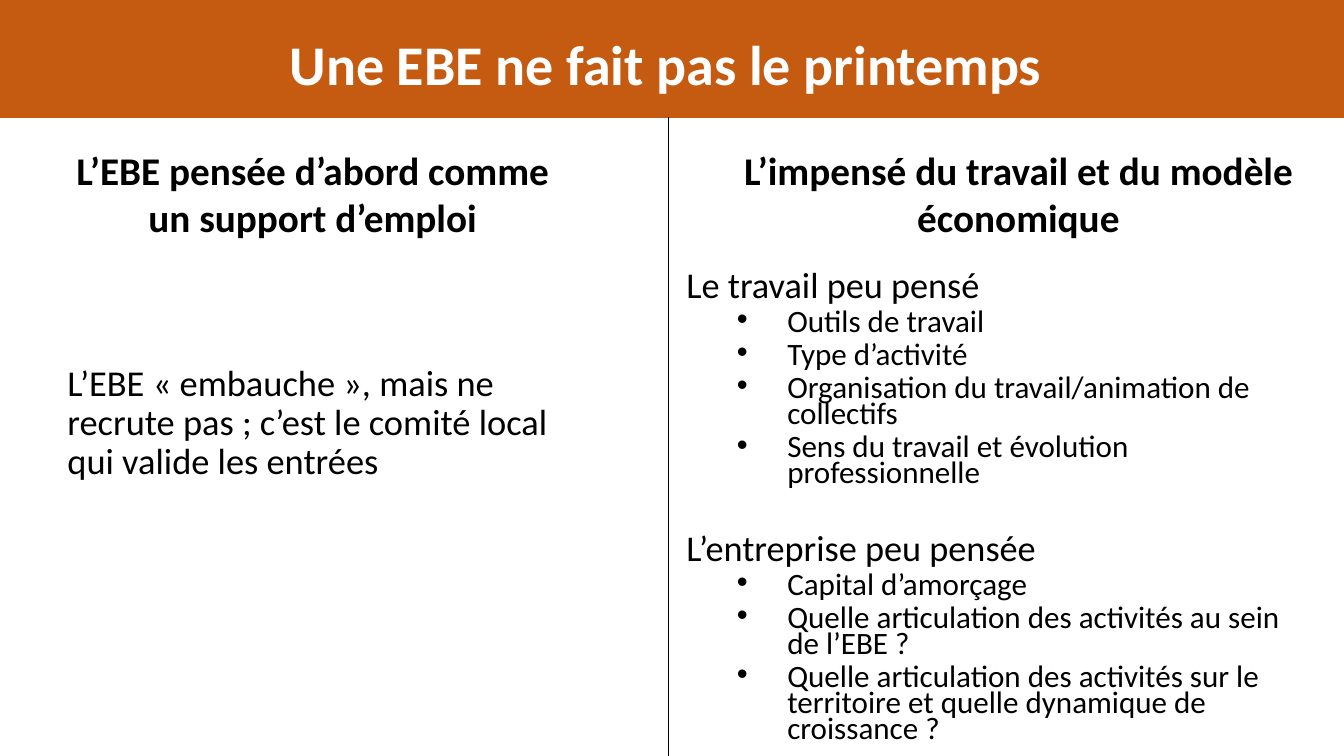
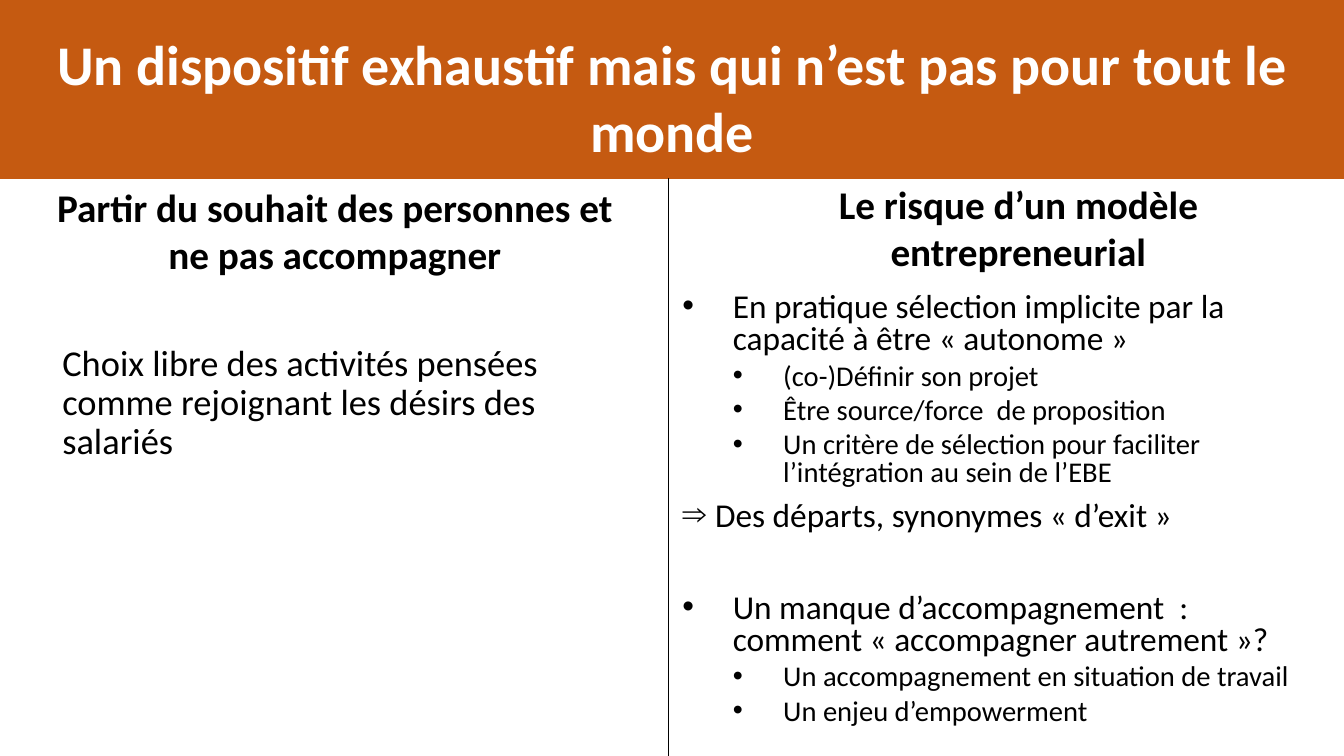
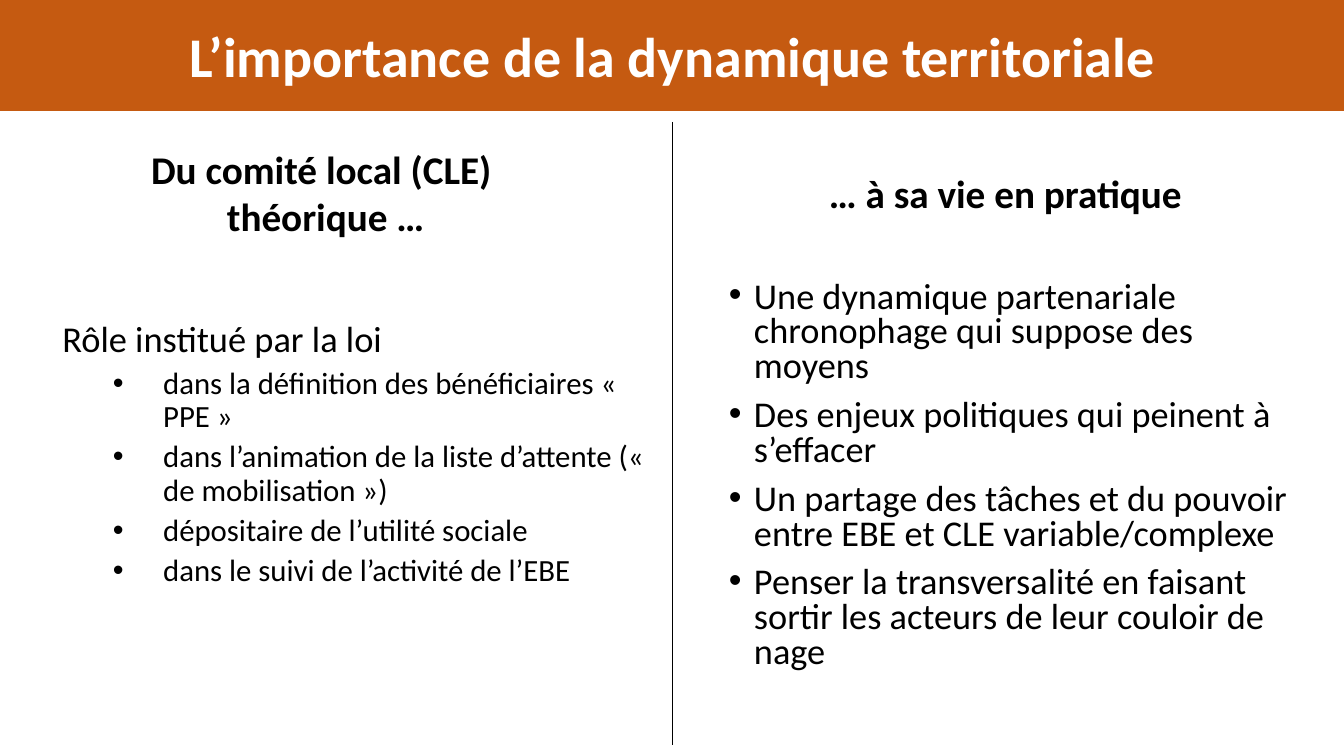
from dataclasses import dataclass

from lxml import etree
from pptx import Presentation
from pptx import util as u
from pptx.dml.color import RGBColor
from pptx.enum import shapes, text
from pptx.oxml.ns import qn


@dataclass(frozen=True)
class Theme:
    font: str = "Calibri"
    band: RGBColor = RGBColor(0xC5, 0x5A, 0x11)
    ink: RGBColor = RGBColor(0, 0, 0)
    paper: RGBColor = RGBColor(255, 255, 255)
    title_size: float = 40
    heading_size: float = 28
    band_line: float = 1
    divider_line: float = 0.5


THEME = Theme()
WIDTH, HEIGHT = 13.33, 7.5

# Paragraph kinds: list level, left margin and hanging indent in inches, space before in points
KINDS = {
    "plain": {"level": 0, "margin": 0, "hang": 0, "bullet": None, "before": 10},
    "item": {"level": 0, "margin": 0.25, "hang": 0.25, "bullet": "•", "before": 10},
    "point": {"level": 0, "margin": 0.5, "hang": 0.5, "bullet": "•", "before": 10},
    "sub": {"level": 1, "margin": 1, "hang": 0.5, "bullet": "•", "before": 5},
    "arrow": {"level": 0, "margin": 0.25, "hang": 0.25, "bullet": "⇒", "before": 10},
}

# Boxes are (left, top, width, height); "sizes" are the type sizes of levels 0 and 1;
# "group_gap" is the space before the paragraph at index "group_start"
SLIDES = [
    {
        "title": "Une EBE ne fait pas le printemps",
        "band_height": 1.16, "title_top": 0.29, "title_right": 0.13,
        "divider": (6.63, 1.16, HEIGHT),
        "headings": [
            ("L’EBE pensée d’abord comme un support d’emploi", (0.57, 1.4, 5.06, 1.04)),
            ("L’impensé du travail et du modèle économique", (7.26, 1.4, 5.68, 1.04)),
        ],
        "bodies": [
            {"box": (0.57, 3.57, 5.42, 3.69), "sizes": (26, 22), "spacing": 0.9, "paras": [
                ("plain", "L’EBE « embauche », mais ne recrute pas ; c’est le comité local "
                          "qui valide les entrées"),
            ]},
            {"box": (6.71, 2.67, 6.39, 5.14), "sizes": (25.9, 22.2), "spacing": 0.7,
             "group_start": 5, "group_gap": 34, "paras": [
                ("plain", "Le travail peu pensé"),
                ("sub", "Outils de travail"),
                ("sub", "Type d’activité"),
                ("sub", "Organisation du travail/animation de collectifs"),
                ("sub", "Sens du travail et évolution professionnelle"),
                ("plain", "L’entreprise peu pensée"),
                ("sub", "Capital d’amorçage"),
                ("sub", "Quelle articulation des activités au sein de l’EBE ?"),
                ("sub", "Quelle articulation des activités sur le territoire et quelle "
                        "dynamique de croissance ?"),
            ]},
        ],
    },
    {
        "title": "Un dispositif exhaustif mais qui n’est pas pour tout le monde",
        "band_height": 1.77, "title_top": 0.29, "title_right": 0,
        "divider": (6.63, 1.77, HEIGHT),
        "headings": [
            ("Partir du souhait des personnes et ne pas accompagner", (0.39, 1.77, 5.86, 1.04)),
            ("Le risque d’un modèle entrepreneurial", (7.26, 1.74, 5.68, 1.04)),
        ],
        "bodies": [
            {"box": (0.52, 3.37, 5.47, 3.67), "sizes": (26, 22), "spacing": 0.9, "paras": [
                ("plain", "Choix libre des activités pensées comme rejoignant les désirs "
                          "des salariés"),
            ]},
            {"box": (6.67, 2.86, 6.27, 4.4), "sizes": (23.8, 20.4), "spacing": 0.8,
             "group_start": 5, "group_gap": 43, "paras": [
                ("point", "En pratique sélection implicite par la capacité à être « autonome »"),
                ("sub", "(co-)Définir son projet"),
                ("sub", "Être source/force  de proposition"),
                ("sub", "Un critère de sélection pour faciliter l’intégration au sein de l’EBE"),
                ("arrow", " Des départs, synonymes « d’exit »"),
                ("point", "Un manque d’accompagnement  : comment « accompagner autrement »?"),
                ("sub", "Un accompagnement en situation de travail"),
                ("sub", "Un enjeu d’empowerment"),
            ]},
        ],
    },
    {
        "title": "L’importance de la dynamique territoriale",
        "band_height": 1.09, "title_top": 0.21, "title_right": 0,
        "divider": (6.67, 1.21, 7.39),
        "headings": [
            ("Du comité local (CLE)  théorique …", (0.7, 1.39, 5.06, 1.04)),
            ("… à sa vie en pratique", (7.13, 1.63, 5.68, 0.57)),
        ],
        "bodies": [
            {"box": (0.52, 3.14, 5.98, 2.84), "sizes": (26, 22), "spacing": 0.9, "paras": [
                ("plain", "Rôle institué par la loi"),
                ("sub", "dans la définition des bénéficiaires « PPE »"),
                ("sub", "dans l’animation de la liste d’attente (« de mobilisation »)"),
                ("sub", "dépositaire de l’utilité sociale"),
                ("sub", "dans le suivi de l’activité de l’EBE"),
            ]},
            {"box": (7.13, 2.74, 5.93, 4.31), "sizes": (25.9, 22.2), "spacing": 0.8, "paras": [
                ("item", "Une dynamique partenariale chronophage qui suppose des moyens"),
                ("item", "Des enjeux politiques qui peinent à s’effacer"),
                ("item", "Un partage des tâches et du pouvoir entre EBE et CLE variable/complexe"),
                ("item", "Penser la transversalité en faisant sortir les acteurs de leur "
                         "couloir de nage"),
            ]},
        ],
    },
]


def set_all(target, values):
    for name, value in values.items():
        setattr(target, name, value)


def write(para, words, size, color, bold=False, **layout):
    span = para.add_run()
    span.text = words
    set_all(span.font, {"name": THEME.font, "size": u.Pt(size), "bold": bold})
    span.font.color.rgb = color
    set_all(para, layout)


def add_bullet(para, kind):
    props = para._p.get_or_add_pPr()
    props.set("marL", str(u.Inches(kind["margin"])))
    props.set("indent", str(u.Inches(-kind["hang"])))
    if kind["bullet"]:
        font = etree.SubElement(props, qn("a:buFont"))
        font.set("typeface", "Arial")
        etree.SubElement(props, qn("a:buChar")).set("char", kind["bullet"])


def add_box(page, box):
    frame = page.shapes.add_textbox(*map(u.Inches, box)).text_frame
    frame.word_wrap = True
    return frame


# The title placeholder is itself the coloured band
def add_title_band(page, content):
    title = page.shapes.title
    set_all(title, {"left": 0, "top": 0, "width": u.Inches(WIDTH),
                    "height": u.Inches(content["band_height"])})
    title.fill.solid()
    title.fill.fore_color.rgb = THEME.band
    title.line.color.rgb = THEME.band
    title.line.width = u.Pt(THEME.band_line)
    frame = title.text_frame
    set_all(frame, {"word_wrap": True, "auto_size": text.MSO_AUTO_SIZE.NONE,
                    "vertical_anchor": text.MSO_ANCHOR.TOP,
                    "margin_left": 0, "margin_right": u.Inches(content["title_right"]),
                    "margin_top": u.Inches(content["title_top"]), "margin_bottom": 0})
    write(frame.paragraphs[0], content["title"], THEME.title_size, THEME.paper, True,
          alignment=text.PP_ALIGN.CENTER, line_spacing=1.0)


def add_heading(page, words, box):
    write(add_box(page, box).paragraphs[0], words, THEME.heading_size, THEME.ink, True,
          alignment=text.PP_ALIGN.CENTER)


def add_body(page, body):
    frame = add_box(page, body["box"])
    for index, (name, words) in enumerate(body["paras"]):
        kind = KINDS[name]
        para = frame.add_paragraph() if index else frame.paragraphs[0]
        starts_group = index == body.get("group_start")
        before = body["group_gap"] if starts_group else kind["before"]
        write(para, words, body["sizes"][kind["level"]], THEME.ink,
              level=kind["level"], line_spacing=body["spacing"], space_before=u.Pt(before))
        add_bullet(para, kind)


def add_divider(page, x, top, bottom):
    divider = page.shapes.add_connector(
        shapes.MSO_CONNECTOR.STRAIGHT, *map(u.Inches, (x, top, x, bottom)))
    divider.line.color.rgb = THEME.ink
    divider.line.width = u.Pt(THEME.divider_line)
    etree.SubElement(divider._element.spPr, qn("a:effectLst"))


def main():
    deck = Presentation()
    deck.slide_width, deck.slide_height = u.Inches(WIDTH), u.Inches(HEIGHT)
    title_only = deck.slide_layouts[5]
    for content in SLIDES:
        page = deck.slides.add_slide(title_only)
        add_title_band(page, content)
        for words, box in content["headings"]:
            add_heading(page, words, box)
        for body in content["bodies"]:
            add_body(page, body)
        add_divider(page, *content["divider"])
    deck.save("out.pptx")


if __name__ == "__main__":
    main()
